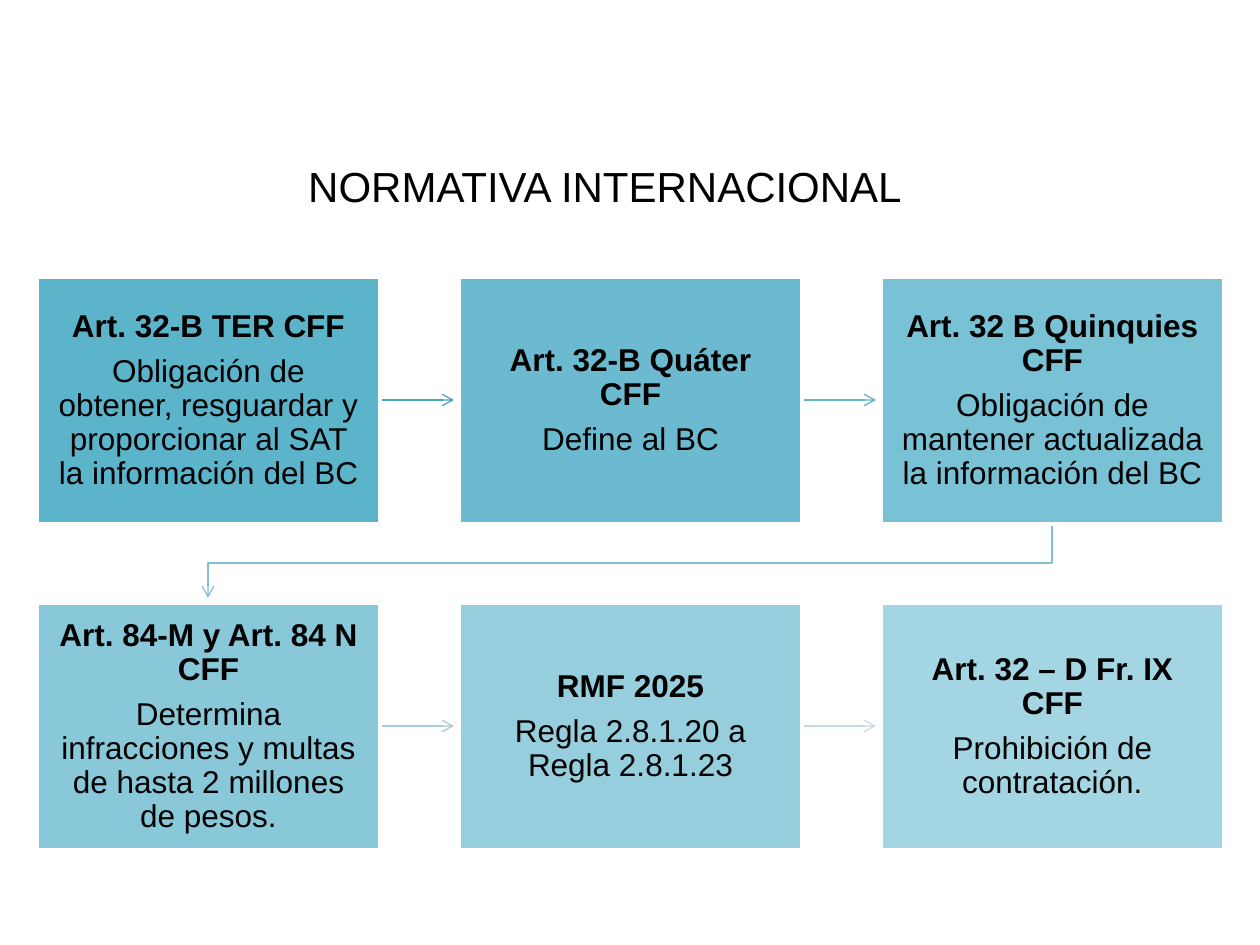
import pptx
import pptx.util
import pptx.dml.color
import pptx.enum.shapes
import pptx.enum.text
import pptx.oxml.ns
from lxml import etree

PX = 914400 // 126
FONT = "Arial"
COLORS = {"text": "000000", "box": "4BACC6", "border": "FFFFFF"}
ARROW_COLORS = ["48A4BD", "67B0C6", "86BDD0", "A4CCDA", "C2DBE5"]
ARTICLES = [
    ("Art. 32-B TER CFF",
     "Obligación de obtener, resguardar y proporcionar al SAT la información del BC"),
    ("Art. 32-B Quáter CFF", "Define al BC"),
    ("Art. 32 B Quinquies CFF",
     "Obligación de mantener actualizada la información del BC"),
    ("Art. 84-M y Art. 84 N CFF",
     "Determina infracciones y multas de hasta 2 millones de pesos."),
    ("RMF 2025", "Regla 2.8.1.20 a Regla 2.8.1.23"),
    ("Art. 32 – D Fr. IX CFF", "Prohibición de contratación."),
]
COLUMNS = 3
BOX_W, BOX_H = 343, 247
PITCH_X, PITCH_Y = 422, 326
ARROW_GAP = 5  # space between an arrow's tip and the next box


def px(value):
    return pptx.util.Emu(value * PX)


def rgb(value):
    return pptx.dml.color.RGBColor.from_string(value)


def format_text(paragraph, size, bold=False):
    paragraph.alignment = pptx.enum.text.PP_ALIGN.CENTER
    for run in paragraph.runs:
        run.font.name = FONT
        run.font.size = pptx.util.Pt(size)
        run.font.bold = bold
        run.font.color.rgb = rgb(COLORS["text"])


def add_title(slide, left, top, width, height):
    title = slide.shapes.title
    title.left, title.top = px(left), px(top)
    title.width, title.height = px(width), px(height)
    frame = title.text_frame
    frame.text = "NORMATIVA INTERNACIONAL"
    frame.auto_size = pptx.enum.text.MSO_AUTO_SIZE.NONE
    frame.vertical_anchor = pptx.enum.text.MSO_ANCHOR.MIDDLE
    format_text(frame.paragraphs[0], 24)


def style_arrow(arrow, color):
    arrow.line.color.rgb = rgb(color)
    arrow.line.width = pptx.util.Pt(0.75)
    line = arrow.line._get_or_add_ln()
    etree.SubElement(line, pptx.oxml.ns.qn("a:tailEnd"), type="arrow")


def add_straight_arrow(slide, left, top, color):
    """Arrow from the right side of the box at left, top to the next box."""
    y = top + BOX_H // 2
    arrow = slide.shapes.add_connector(
        pptx.enum.shapes.MSO_CONNECTOR.STRAIGHT,
        px(left + BOX_W), px(y), px(left + PITCH_X - ARROW_GAP), px(y))
    etree.SubElement(arrow._element.spPr, pptx.oxml.ns.qn("a:effectLst"))
    style_arrow(arrow, color)


def add_row_arrow(slide, left, top, color):
    """Bent arrow from the last box of a row, at left, top, to the next row."""
    start_x = left + BOX_W // 2
    end_x = start_x - (COLUMNS - 1) * PITCH_X
    start_y = top + BOX_H
    bend_y = start_y + (PITCH_Y - BOX_H) // 2
    end_y = top + PITCH_Y - ARROW_GAP
    builder = slide.shapes.build_freeform(start_x, start_y, scale=PX)
    builder.add_line_segments(
        [(start_x, bend_y), (end_x, bend_y), (end_x, end_y)], close=False)
    arrow = builder.convert_to_shape()
    arrow.shadow.inherit = False
    arrow.fill.background()
    style_arrow(arrow, color)


def add_article(slide, left, top, texts, opacity):
    box = slide.shapes.add_shape(pptx.enum.shapes.MSO_SHAPE.RECTANGLE,
                                 px(left), px(top), px(BOX_W), px(BOX_H))
    box.shadow.inherit = False
    box.fill.solid()
    box.fill.fore_color.rgb = rgb(COLORS["box"])
    fill_color = box._element.spPr.find(".//" + pptx.oxml.ns.qn("a:srgbClr"))
    etree.SubElement(fill_color, pptx.oxml.ns.qn("a:alpha"), val=str(opacity * 1000))
    box.line.color.rgb = rgb(COLORS["border"])
    box.line.width = pptx.util.Pt(2)

    frame = box.text_frame
    frame.word_wrap = True
    frame.vertical_anchor = pptx.enum.text.MSO_ANCHOR.MIDDLE
    frame.margin_left = frame.margin_right = px(18)
    frame.margin_top = frame.margin_bottom = px(18)
    frame.text = "\n".join(texts)
    for index, paragraph in enumerate(frame.paragraphs):
        paragraph.line_spacing = 0.9
        paragraph.space_after = pptx.util.Pt(6.3)
        format_text(paragraph, 18, bold=index == 0)


def add_flow(slide, left, top):
    places = [(left + index % COLUMNS * PITCH_X, top + index // COLUMNS * PITCH_Y)
              for index in range(len(ARTICLES))]
    for index, color in enumerate(ARROW_COLORS):
        ends_row = index % COLUMNS == COLUMNS - 1
        add_arrow = add_row_arrow if ends_row else add_straight_arrow
        add_arrow(slide, *places[index], color)
    for index, texts in enumerate(ARTICLES):
        add_article(slide, *places[index], texts, opacity=90 - 8 * index)


def main():
    deck = pptx.Presentation()
    deck.slide_width, deck.slide_height = px(1260), px(945)
    slide = deck.slides.add_slide(deck.slide_layouts.get_by_name("Title Only"))
    add_title(slide, 59, 154, 1092, 63)
    add_flow(slide, 37, 277)
    deck.save("out.pptx")


if __name__ == "__main__":
    main()
